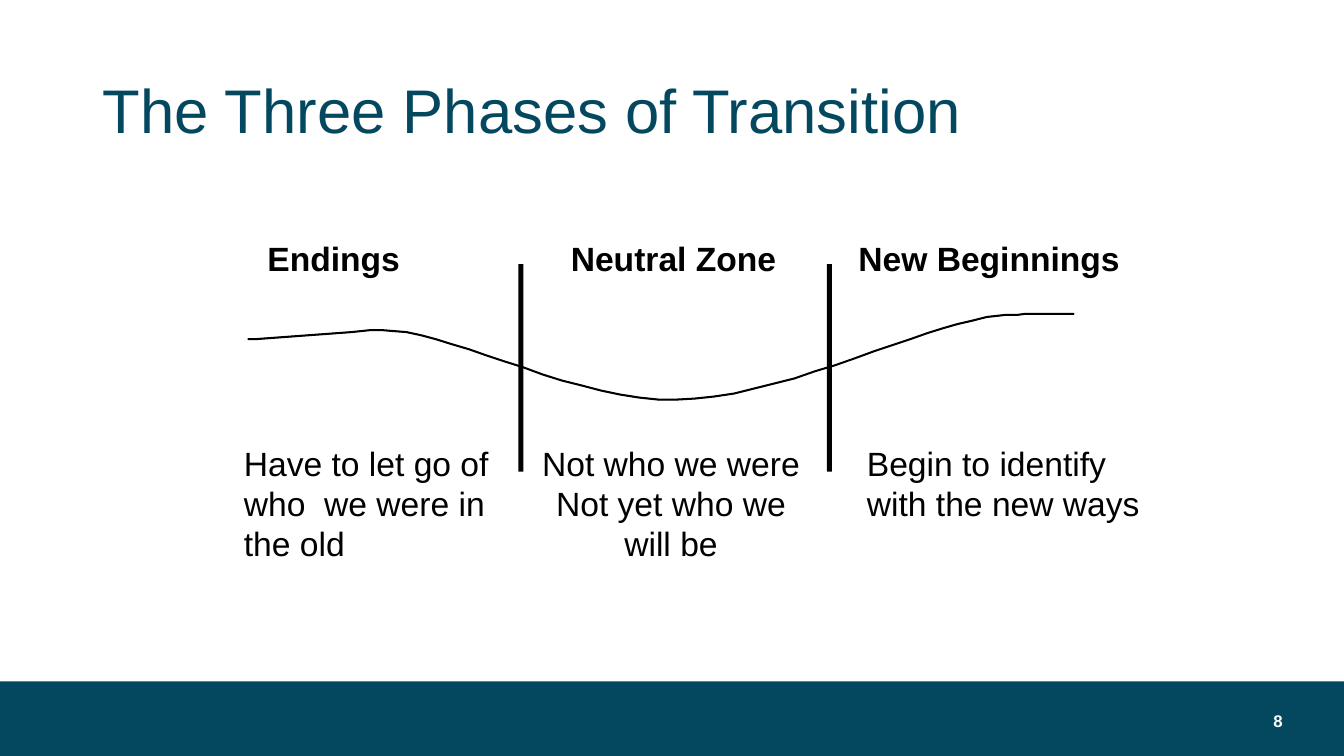
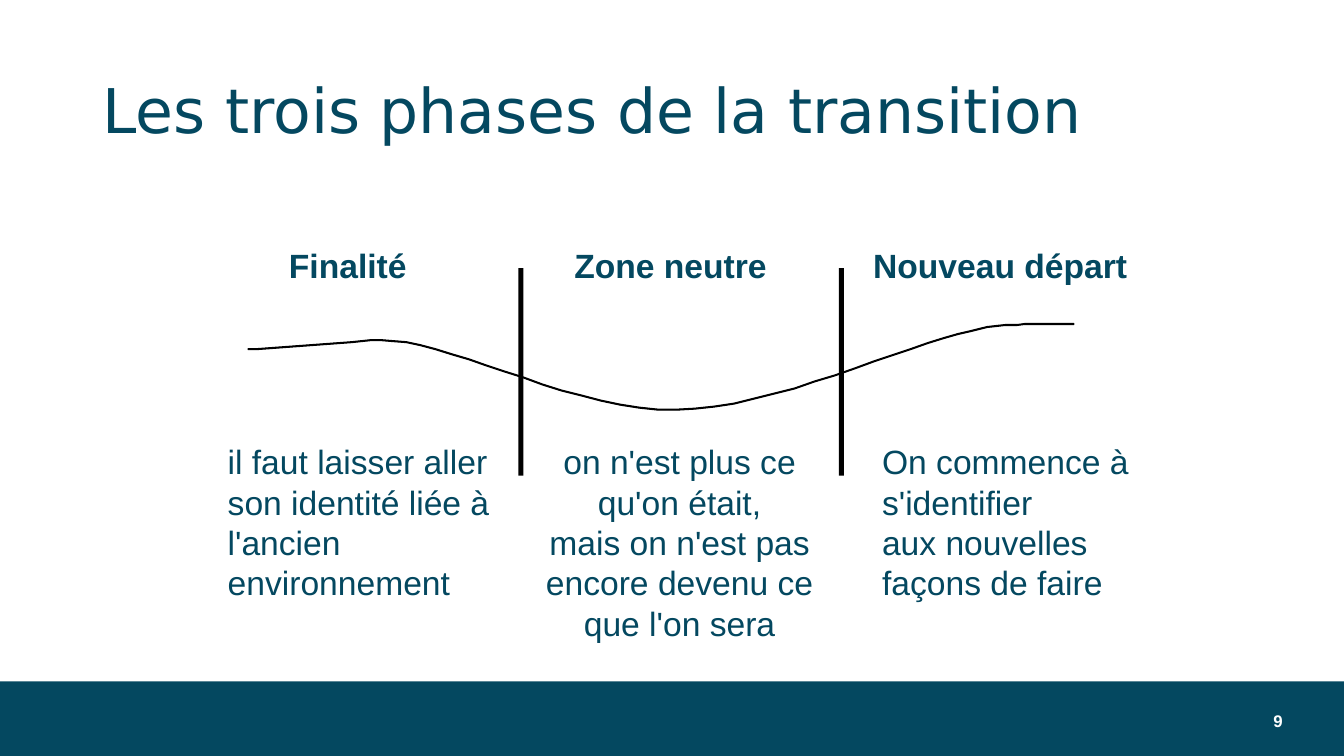
"""Build two slides on the three phases of transition, in English and French."""
from pptx import Presentation, util as u
from pptx.dml.color import RGBColor
from pptx.enum import shapes, text

PX = 9144
WIDTH, HEIGHT = 1333, 750


class Theme:
    teal = RGBColor.from_string("044860")
    black = RGBColor.from_string("000000")
    white = RGBColor.from_string("FFFFFF")
    title = {"size": u.Pt(44), "name": "Arial", "bold": False}
    heading = {"size": u.Pt(24), "name": "Arial", "bold": True}
    body = {"size": u.Pt(24), "name": "Arial", "bold": False}
    number = {"size": u.Pt(12), "name": "Arial", "bold": True}


LEFT, CENTER = text.PP_ALIGN.LEFT, text.PP_ALIGN.CENTER
HEADING_WIDTH = 280
DIVIDER_WIDTH, DIVIDER_HEIGHT = 5, 206
CURVE_LEFT = 246
CURVE = [
    (0, 25), (8, 25), (103, 18), (122, 16), (132, 16), (144, 17), (157, 18),
    (171, 21), (186, 25), (202, 30), (219, 35), (236, 41), (254, 47), (273, 53),
    (292, 60), (311, 66), (331, 71), (350, 76), (369, 80), (388, 83), (407, 85),
    (425, 85), (443, 84), (462, 82), (482, 79), (502, 74), (522, 69), (542, 64),
    (562, 57), (582, 51), (602, 44), (621, 37), (639, 31), (657, 25), (674, 19),
    (690, 14), (704, 10), (717, 7), (725, 5), (733, 3), (742, 2), (751, 1),
    (763, 1), (770, 0), (819, 0),
]

SLIDES = [
    {
        "number": "8",
        "title": "The Three Phases of Transition",
        "title_font": "Arial",
        "color": Theme.black,
        "heading_top": 236,
        "body_top": 434,
        "curve_top": 311,
        "divider_top": 262,
        "dividers": [514, 820],
        "phases": [
            ("Endings", 331, 232, 268, LEFT,
             ["Have to let go of who  we were in the old"]),
            ("Neutral Zone", 668, 527, 277, CENTER,
             ["Not who we were", "Not yet who we will be"]),
            ("New Beginnings", 981, 850, 300, LEFT,
             ["Begin to identify", "with the new ways"]),
        ],
    },
    {
        "number": "9",
        "title": "Les trois phases de la transition",
        "title_font": "DejaVu Sans",
        "color": Theme.teal,
        "heading_top": 243,
        "body_top": 433,
        "curve_top": 321,
        "divider_top": 266,
        "dividers": [514, 832],
        "phases": [
            ("Finalité", 345, 216, 291, LEFT,
             ["il faut laisser aller\nson identité liée à l'ancien environnement"]),
            ("Zone neutre", 665, 528, 292, CENTER,
             ["on n'est plus ce qu'on était,",
              "mais on n'est pas encore devenu ce que l'on sera"]),
            ("Nouveau départ", 992, 865, 318, LEFT,
             ["On commence à s'identifier", "aux nouvelles façons de faire"]),
        ],
    },
]


def add_text(slide, box, lines, style, color, align=LEFT, frame_format=None):
    shape = slide.shapes.add_textbox(*(value * PX for value in box))
    frame = shape.text_frame
    for name, value in {"word_wrap": True, **(frame_format or {})}.items():
        setattr(frame, name, value)
    for index, line in enumerate(lines):
        paragraph = frame.add_paragraph() if index else frame.paragraphs[0]
        paragraph.text = line
        paragraph.alignment = align
        for run in paragraph.runs:
            for name, value in style.items():
                setattr(run.font, name, value)
            run.font.color.rgb = color
    return frame


def add_block(slide, box, color):
    shape = slide.shapes.add_shape(
        shapes.MSO_SHAPE.RECTANGLE, *(value * PX for value in box))
    shape.shadow.inherit = False
    shape.fill.solid()
    shape.fill.fore_color.rgb = color
    shape.line.fill.background()


presentation = Presentation()
presentation.slide_width = WIDTH * PX
presentation.slide_height = HEIGHT * PX
no_margins = dict.fromkeys(
    ["margin_left", "margin_top", "margin_right", "margin_bottom"], 0)

for content in SLIDES:
    slide = presentation.slides.add_slide(presentation.slide_layouts[6])
    add_block(slide, (0, 676, WIDTH, 74), Theme.teal)
    add_text(slide, (1241, 700, 53, 30), [content["number"]],
             Theme.number, Theme.white, CENTER)
    title = add_text(slide, (92, 40, 1150, 145), [content["title"]],
                     {**Theme.title, "name": content["title_font"]}, Theme.teal,
                     frame_format={"vertical_anchor": text.MSO_ANCHOR.MIDDLE})
    title.paragraphs[0].line_spacing = 0.9

    top = content["curve_top"]
    upper = [(CURVE_LEFT + x, top + y) for x, y in CURVE]
    lower = [(x, y + 1) for x, y in reversed(upper)]
    builder = slide.shapes.build_freeform(*upper[0], scale=PX)
    builder.add_line_segments(upper[1:] + lower, close=True)
    curve = builder.convert_to_shape()
    curve.shadow.inherit = False
    curve.fill.solid()
    curve.fill.fore_color.rgb = Theme.black
    curve.line.color.rgb = Theme.black
    curve.line.width = 0

    for left in content["dividers"]:
        add_block(slide, (left, content["divider_top"], DIVIDER_WIDTH, DIVIDER_HEIGHT),
                  Theme.black)

    for heading, center, left, width, align, lines in content["phases"]:
        add_text(slide, (center - HEADING_WIDTH // 2, content["heading_top"],
                         HEADING_WIDTH, 40),
                 [heading], Theme.heading, content["color"], CENTER, no_margins)
        add_text(slide, (left, content["body_top"], width, 40 * 5 + 10),
                 lines, Theme.body, content["color"], align)

presentation.save("out.pptx")
